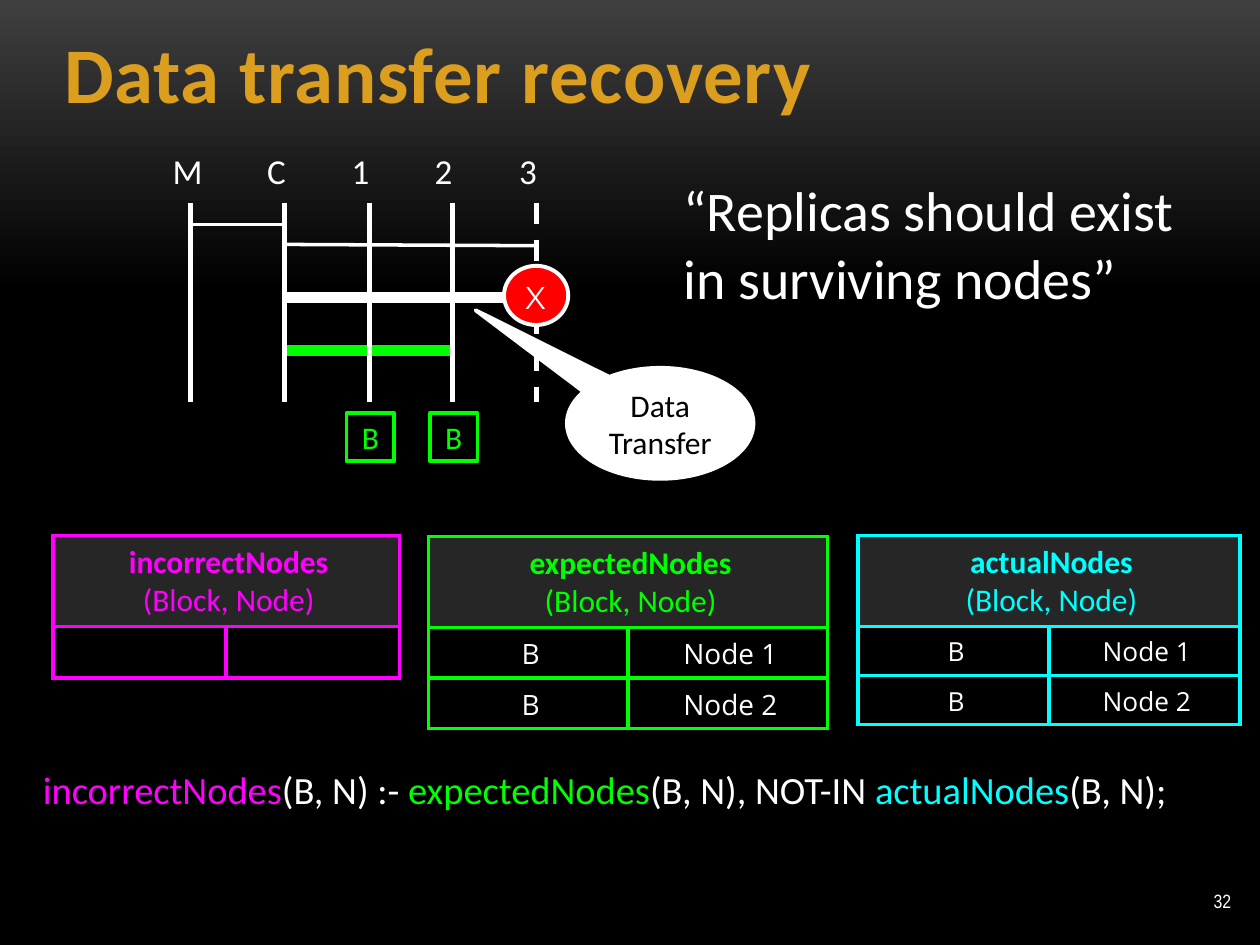
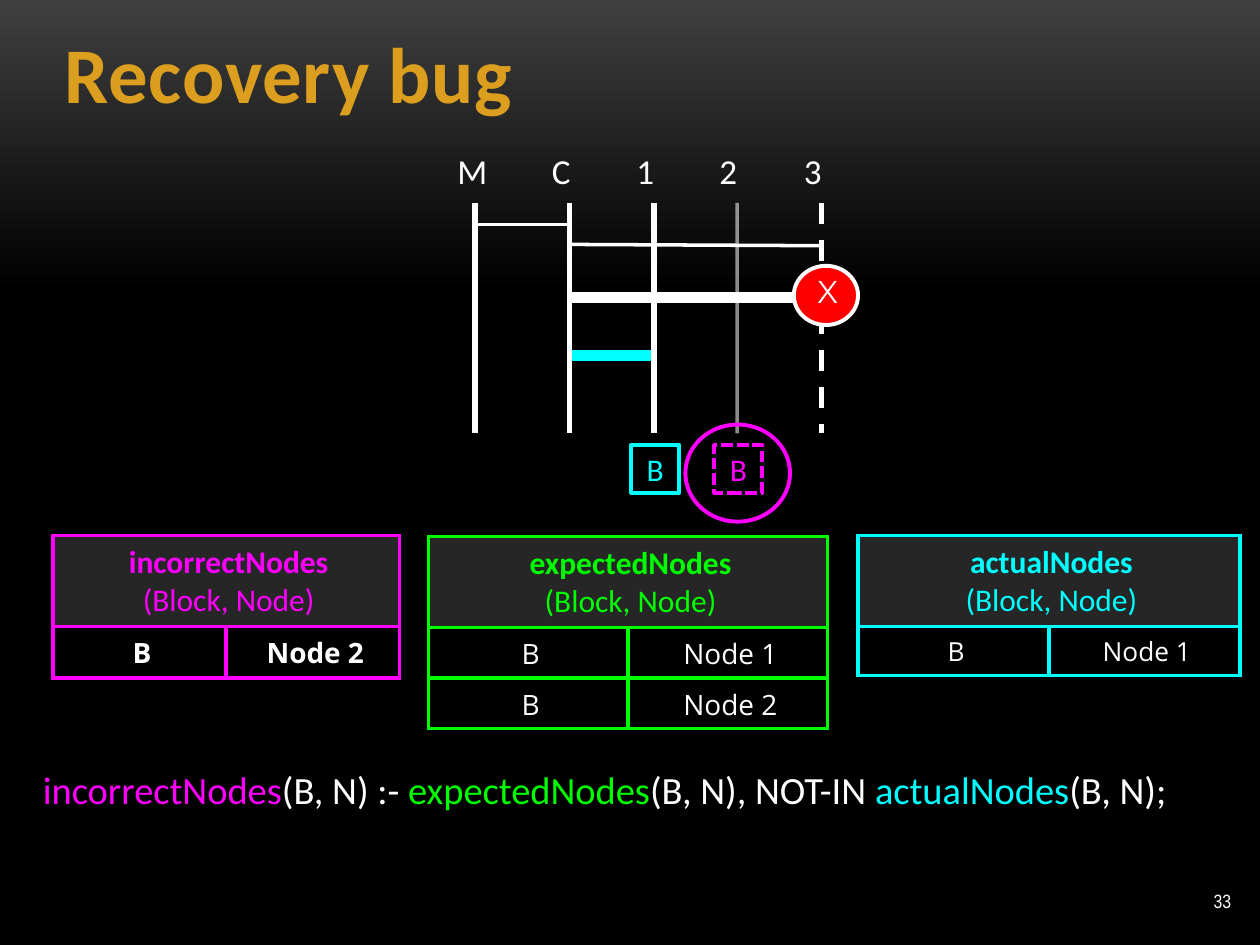
from dataclasses import dataclass

from lxml import etree
from pptx import Presentation
from pptx import util as u
from pptx.dml.color import RGBColor
from pptx.enum import dml, shapes, text
from pptx.oxml.ns import qn

Inches, Pt = u.Inches, u.Pt
LEFT, MID, RIGHT = text.PP_ALIGN.LEFT, text.PP_ALIGN.CENTER, text.PP_ALIGN.RIGHT
SHAPE, DASH = shapes.MSO_SHAPE, dml.MSO_LINE


@dataclass(frozen=True)
class Theme:
    # Colours
    gold: str = "DC9E1F"
    white: str = "FFFFFF"
    black: str = "000000"
    glow: str = "3F3F3F"
    head: str = "262626"
    red: str = "FF0000"
    lime: str = "00FF00"
    cyan: str = "00FFFF"
    pink: str = "FF00FF"
    # Fonts
    main: str = "Calibri"
    data: str = "Open Sans"
    mark: str = "Montserrat"
    foot: str = "Arial Narrow"
    # Type sizes
    title: int = 45
    quote: int = 32
    rule: int = 22
    label: int = 20
    body: int = 18
    cell: int = 16
    small: int = 15
    page: int = 11
    # Line widths
    edge: float = 2.25
    thin: float = 2
    post: float = 3
    wide: float = 6


T = Theme()
NODES = ("M", "C", "1", "2", "3")
STEPS = (0, 0.75, 1.42, 2.08, 2.75)


def rgb(code):
    return RGBColor.from_string(code)


def box(left, top, width, height):
    return [Inches(n) for n in (left, top, width, height)]


class Deck:
    def __init__(self, theme):
        self.t = theme
        self.prs = Presentation()
        self.prs.slide_width, self.prs.slide_height = Inches(10), Inches(7.5)
        self.slide = None
        # Shared backdrop: grey fading to black
        fill = self.prs.slide_master.background.fill
        fill.gradient()
        fill.gradient_angle = 270
        for stop, code, place in zip(fill.gradient_stops, (theme.glow, theme.black), (0, 0.31)):
            stop.color.rgb, stop.position = rgb(code), place

    def page(self, title, number, width):
        self.slide = self.prs.slides.add_slide(self.prs.slide_layouts[5])
        head = self.slide.shapes.title
        head.left, head.top, head.width, head.height = box(0.41, 0, width, 1)
        self.put(head.text_frame, [title], self.t.title, self.t.gold, bold=True,
                 anchor=text.MSO_ANCHOR.BOTTOM)
        head.text_frame.paragraphs[0].font._element.set("spc", "50")
        self.label(str(number), 8.79, 6.95, 1.08, 0.4, self.t.page, font=self.t.foot,
                   align=RIGHT, anchor=text.MSO_ANCHOR.MIDDLE)

    def put(self, frame, lines, size, color, font=None, bold=False, align=LEFT,
            anchor=text.MSO_ANCHOR.TOP, inset=None, indent=None, wrap=True):
        """Fill a frame; a line is a string or a list of (string, colour)."""
        frame.word_wrap = wrap
        frame.vertical_anchor = anchor
        if inset:
            (frame.margin_left, frame.margin_top,
             frame.margin_right, frame.margin_bottom) = box(*inset)
        for i, line in enumerate(lines):
            para = frame.paragraphs[0] if i == 0 else frame.add_paragraph()
            self.style(para, size, color, font, bold, align, indent)
            parts = [(line, None)] if isinstance(line, str) else line
            for words, tint in parts:
                run = para.add_run()
                run.text = words
                if tint:
                    run.font.color.rgb = rgb(tint)

    def style(self, para, size, color, font=None, bold=False, align=LEFT, indent=None):
        para.alignment = align
        para.font.name, para.font.size = font or self.t.main, Pt(size)
        para.font.bold, para.font.color.rgb = bold, rgb(color)
        if indent:
            for key, value in zip(("marL", "indent"), indent):
                para._p.get_or_add_pPr().set(key, str(Inches(value)))

    def label(self, words, left, top, width, height, size, color=None, **look):
        area = self.slide.shapes.add_textbox(*box(left, top, width, height))
        lines = [words] if isinstance(words, str) else words
        self.put(area.text_frame, lines, size, color or self.t.white, **look)
        return area

    def shape(self, kind, left, top, width, height, fill=None, edge=None, dash=None):
        item = self.slide.shapes.add_shape(kind, *box(left, top, width, height))
        item.shadow.inherit = False
        if fill:
            item.fill.solid()
            item.fill.fore_color.rgb = rgb(fill)
        else:
            item.fill.background()
        if edge:
            item.line.color.rgb, item.line.width = rgb(edge), Pt(self.t.edge)
            if dash:
                item.line.dash_style = dash
        else:
            item.line.fill.background()
        return item

    def line(self, x1, y1, x2, y2, width, color=None, dash=None, alpha=None):
        link = self.slide.shapes.add_connector(
            shapes.MSO_CONNECTOR.STRAIGHT, *box(x1, y1, x2, y2))
        link.line.color.rgb, link.line.width = rgb(color or self.t.white), Pt(width)
        if dash:
            link.line.dash_style = dash
        props = link._element.spPr
        if alpha:
            tint = props.find(".//" + qn("a:srgbClr"))
            etree.SubElement(tint, qn("a:alpha")).set("val", str(alpha * 1000))
        etree.SubElement(props, qn("a:effectLst"))

    def border(self, cell, color):
        props = cell._tc.get_or_add_tcPr()
        for side in ("lnL", "lnR", "lnT", "lnB"):
            edge = etree.SubElement(props, qn("a:" + side), w=str(Pt(self.t.edge)))
            fill = etree.SubElement(edge, qn("a:solidFill"))
            etree.SubElement(fill, qn("a:srgbClr"), val=color)

    def table(self, name, rows, color, left, top, width, deep, size, bold=False):
        head = 0.72
        grid = self.slide.shapes.add_table(
            len(rows) + 1, 2, *box(left, top, width, head + deep * len(rows))).table
        grid.first_row = grid.horz_banding = False
        for i, row in enumerate(grid.rows):
            row.height = Inches(deep if i else head)
            for j, cell in enumerate(row.cells):
                self.border(cell, color)
                cell.fill.solid()
                cell.fill.fore_color.rgb = rgb(self.t.black if i else self.t.head)
                words = rows[i - 1][j] if i else ""
                self.put(cell.text_frame, [words] if words else [], size, self.t.white,
                         self.t.data, bold, MID, indent=(0.04, 0))
                (cell.margin_left, cell.margin_top,
                 cell.margin_right, cell.margin_bottom) = box(*[0.06] * 4)
                if not words:
                    self.style(cell.text_frame.paragraphs[0], size, self.t.white)
        # Heading across both columns
        first = grid.cell(0, 0)
        first.merge(grid.cell(0, 1))
        self.put(first.text_frame, [name, "(Block, Node)"], self.t.body, color,
                 bold=True, align=MID, indent=(0.04, 0))
        first.text_frame.paragraphs[1].font.bold = False

    def block(self, x, foot, color, dash=None):
        item = self.shape(SHAPE.RECTANGLE, x - 0.18, foot + 0.09, 0.38, 0.38,
                          self.t.black, color, dash)
        self.put(item.text_frame, ["B"], self.t.body, color, align=MID,
                 anchor=text.MSO_ANCHOR.MIDDLE, inset=(0.1, 0, 0.1, 0))

    def flow(self, left, foot, target, level, color, faint=None):
        """Draw the message chart and return the node positions."""
        spots = {n: left + step for n, step in zip(NODES, STEPS)}
        # Messages
        self.line(spots["C"], level, spots[target], level, self.t.wide, color)
        self.line(spots["C"], 1.78, spots["M"], 1.78, self.t.thin)
        self.line(spots["C"], 1.94, spots["3"], 1.95, self.t.thin)
        self.line(spots["C"], 2.36, spots["3"], 2.36, self.t.wide)
        # Node names and time lines
        for node, x in spots.items():
            wide = {"M": 0.26, "C": 0.24}.get(node, 0.19)
            self.label(node, x - 0.18, 1.19, wide, 0.34, self.t.label,
                       inset=(0, 0, 0.04, 0), indent=(0.04, 0), wrap=False)
            pale = node == faint
            self.line(x, 1.61, x, foot, self.t.thin if pale else self.t.post,
                      dash=DASH.DASH if node == "3" else None, alpha=54 if pale else None)
        return spots

    def crash(self, left, x, y):
        self.shape(SHAPE.OVAL, left, 2.11, 0.51, 0.47, self.t.red, self.t.white)
        self.label("X", x, y, 0.5, 0.3, self.t.body, font=self.t.mark, align=MID,
                   anchor=text.MSO_ANCHOR.MIDDLE, inset=(0.1, 0, 0.1, 0))

    def facts(self, wrong, actual):
        """Three tables and the rule that links them."""
        t = self.t
        both = [("B", "Node 1"), ("B", "Node 2")]
        self.table("expectedNodes", both, t.lime, 3.4, 4.26, 3.17, 0.4, t.cell)
        self.table("actualNodes", both[:actual], t.cyan, 6.81, 4.25, 3.03, 0.39, t.small)
        self.table("incorrectNodes", [wrong], t.pink, 0.42, 4.25, 2.75, 0.41, t.cell, True)
        rule = [("incorrectNodes", t.pink), ("(B, N) :- ", t.white),
                ("expectedNodes", t.lime), ("(B, N), NOT-IN ", t.white),
                ("actualNodes", t.cyan), ("(B, N);", t.white)]
        area = self.label([rule], 0.3, 6.08, 9.54, 0.61, t.rule,
                          inset=(0, 0, 0.04, 0), indent=(0.42, -0.38))
        area.text_frame.paragraphs[0].space_before = Pt(5.1)


def transfer(deck):
    deck.page("Data transfer recovery", 32, 8.67)
    deck.facts(("", ""), 2)
    foot = 3.19
    spots = deck.flow(1.51, foot, "2", 2.78, T.lime)
    deck.crash(4, 4, 2.21)
    for node in "12":
        deck.block(spots[node], foot, T.lime)
    # Callout on the broken transfer
    note = deck.shape(SHAPE.OVAL_CALLOUT, 4.5, 2.92, 1.48, 0.88, T.white, T.white)
    note.adjustments[0], note.adjustments[1] = -0.99, -1.02
    deck.put(note.text_frame, ["Data", "Transfer"], T.body, T.black, align=MID,
             anchor=text.MSO_ANCHOR.MIDDLE)
    # Stated goal
    goal = deck.shape(SHAPE.ROUNDED_RECTANGLE, 5.27, 1.35, 4.28, 1.16)
    deck.put(goal.text_frame, ["“Replicas should exist", "in surviving nodes”"],
             T.quote, T.white, anchor=text.MSO_ANCHOR.MIDDLE, indent=(0.38, -0.38))


def bug(deck):
    deck.page("Recovery bug", 33, 9.11)
    deck.facts(("B", "Node 2"), 1)
    foot = 3.44
    spots = deck.flow(3.77, foot, "1", 2.82, T.cyan, faint="2")
    deck.crash(6.3, 6.32, 2.16)
    # Stored block, and the missing one ringed
    deck.block(spots["1"], foot, T.cyan)
    deck.block(spots["2"], foot, T.pink, DASH.SQUARE_DOT)
    deck.shape(SHAPE.OVAL, 5.44, 3.37, 0.83, 0.77, edge=T.pink)


def main():
    deck = Deck(T)
    transfer(deck)
    bug(deck)
    deck.prs.save("out.pptx")


if __name__ == "__main__":
    main()
